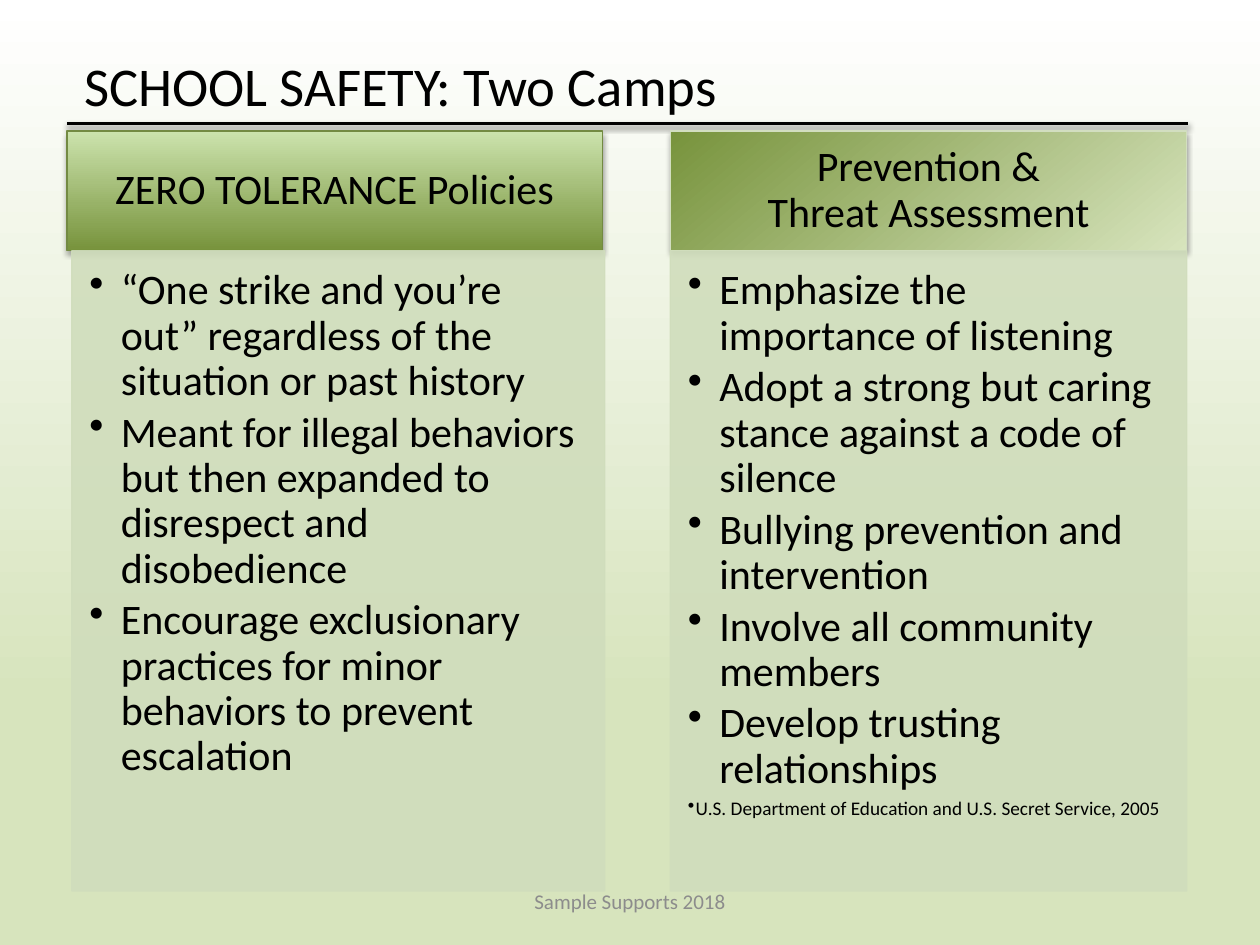
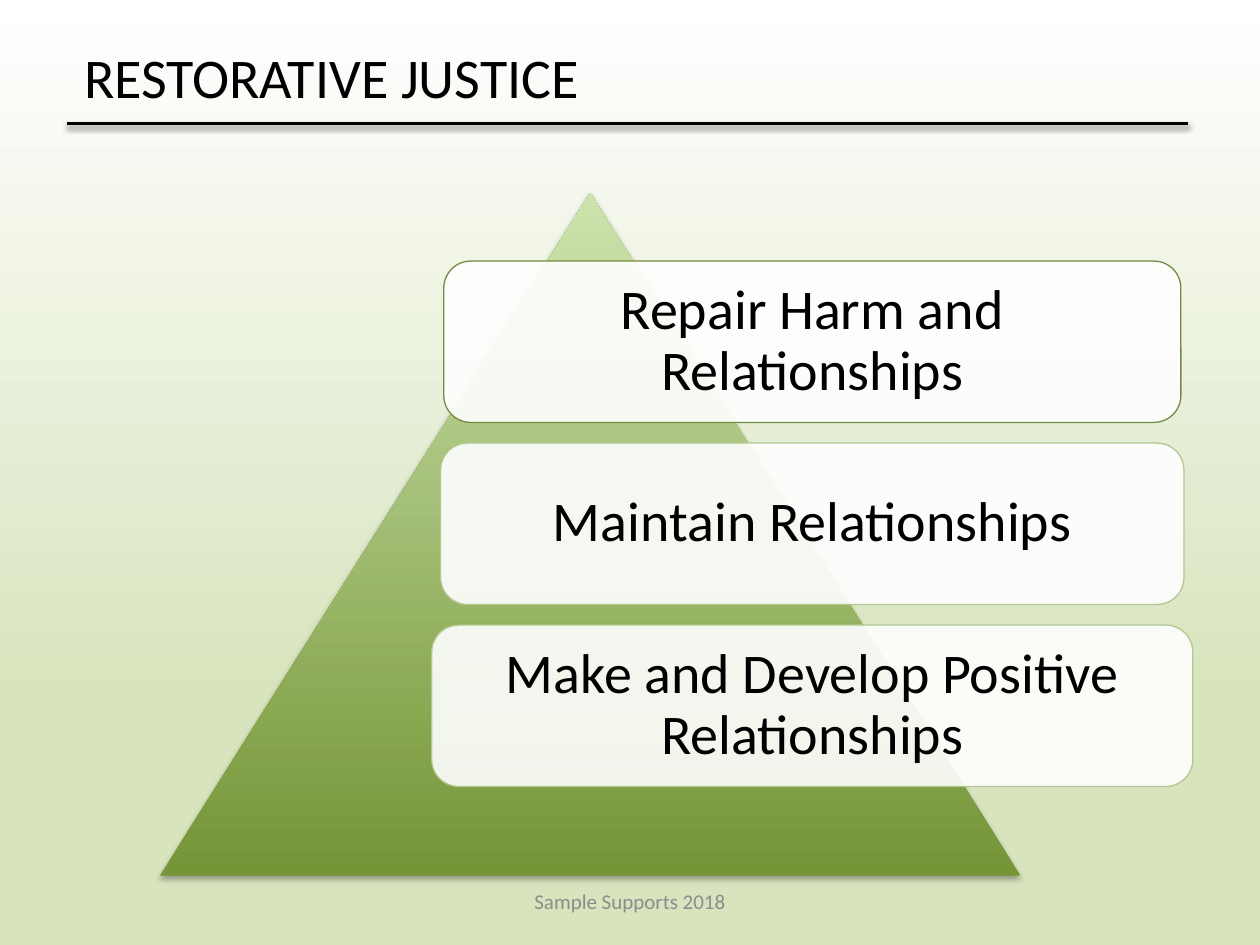
from dataclasses import dataclass

from lxml.etree import SubElement
from pptx import Presentation
from pptx.dml.color import RGBColor
from pptx.enum.shapes import MSO_CONNECTOR, MSO_SHAPE
from pptx.enum.text import MSO_ANCHOR, PP_ALIGN
from pptx.oxml.ns import qn
from pptx.util import Pt


@dataclass(frozen=True)
class Theme:
    font: str = "Calibri"
    black: str = "000000"
    white: str = "FFFFFF"
    footer_gray: str = "8C8C8C"
    pale_green: str = "D7E4BD"
    olive: str = "77933C"
    deep_olive: str = "769537"
    light_green: str = "CCE3AD"
    panel_green: str = "D0DDBC"
    dark_outline: str = "738A42"
    soft_outline: str = "B3C791"
    header_outline: str = "D2DEC0"
    box_size: float = 32
    body_size: float = 24
    footer_size: float = 12
    source_size: float = 11


theme = Theme()


def style(shape, fill=None, line=None, width=0.75, alpha=None, shadow=None):
    """Fill is a colour or (start, end, clockwise angle); shadow is (opacity %, distance)."""
    properties = shape._element.spPr
    if isinstance(fill, tuple):
        *colors, angle = fill
        shape.fill.gradient()
        shape.fill.gradient_angle = 360 - angle
        for stop, color in zip(shape.fill.gradient_stops, colors):
            stop.color.rgb = RGBColor.from_string(color)
    elif fill:
        shape.fill.solid()
        shape.fill.fore_color.rgb = RGBColor.from_string(fill)
    if line:
        shape.line.color.rgb = RGBColor.from_string(line)
        shape.line.width = Pt(width)
    else:
        shape.line.fill.background()
    if alpha:
        for color in properties.iter(qn("a:srgbClr")):
            if color.get("val") == fill:
                SubElement(color, qn("a:alpha"), val=str(alpha * 1000))
    effects = SubElement(properties, qn("a:effectLst"))
    if shadow:
        opacity, distance = shadow
        outer = SubElement(effects, qn("a:outerShdw"), blurRad=str(Pt(3.1)),
                           dist=str(Pt(distance)), dir="5400000", rotWithShape="0")
        color = SubElement(outer, qn("a:srgbClr"), val=theme.black)
        SubElement(color, qn("a:alpha"), val=str(opacity * 1000))


def write_text(shape, lines, size, color=theme.black, align=PP_ALIGN.CENTER,
               anchor=MSO_ANCHOR.MIDDLE, insets=(7.2, 3.6, 7.2, 3.6), spacing=0.9, after=0):
    """Write one paragraph per line; insets run left, top, right, bottom."""
    frame = shape.text_frame
    frame.word_wrap = True
    frame.vertical_anchor = anchor
    frame.margin_left, frame.margin_top, frame.margin_right, frame.margin_bottom = map(Pt, insets)
    for index, line in enumerate(lines):
        paragraph = frame.add_paragraph() if index else frame.paragraphs[0]
        paragraph.alignment = align
        paragraph.line_spacing = spacing
        paragraph.space_after = Pt(after)
        run = paragraph.add_run()
        run.text = line
        run.font.name = theme.font
        run.font.size = Pt(size)
        run.font.color.rgb = RGBColor.from_string(color)


presentation = Presentation()
presentation.slide_width, presentation.slide_height = Pt(720), Pt(540)
soft_shadow = (35, 1.8)

# Shared background, title, rule and footer
slides = []
for title, title_top, title_size in [("SCHOOL SAFETY: Two Camps", 26, 31.2),
                                     ("RESTORATIVE JUSTICE", 21, 32)]:
    slide = presentation.slides.add_slide(presentation.slide_layouts[6])
    slides.append(slide)
    background = slide.background.fill
    background.gradient()
    background.gradient_angle = 270
    for stop, color, position in zip(background.gradient_stops,
                                     (theme.white, theme.pale_green), (0, 0.74)):
        stop.color.rgb = RGBColor.from_string(color)
        stop.position = position

    footer = slide.shapes.add_textbox(Pt(246), Pt(500.5), Pt(228), Pt(28.8))
    write_text(footer, ["Sample Supports 2018"], theme.footer_size, theme.footer_gray, spacing=1)
    rule = slide.shapes.add_connector(MSO_CONNECTOR.STRAIGHT, Pt(38.2), Pt(70.6), Pt(679), Pt(70.6))
    style(rule, line=theme.black, width=2, shadow=(38, 1.6))
    title_box = slide.shapes.add_textbox(Pt(41), Pt(title_top), Pt(500), Pt(46))
    write_text(title_box, [title], title_size, align=PP_ALIGN.LEFT,
               anchor=MSO_ANCHOR.TOP, spacing=1)

camps_slide, justice_slide = slides

# Two camps: a header above a bulleted panel
source = "U.S. Department of Education and U.S. Secret Service, 2005"
camps = [
    (["ZERO TOLERANCE Policies"], (38.2, 306), (41, 304.6),
     (theme.olive, theme.light_green, 270), theme.dark_outline,
     ["“One strike and you’re out” regardless of the situation or past history",
      "Meant for illegal behaviors but then expanded to disrespect and disobedience",
      "Encourage exclusionary practices for minor behaviors to prevent escalation"]),
    (["Prevention &", "Threat Assessment"], (383, 295.2), (383, 295.2),
     (theme.olive, theme.pale_green, 50), theme.header_outline,
     ["Emphasize the importance of listening",
      "Adopt a strong but caring stance against a code of silence",
      "Bullying prevention and intervention",
      "Involve all community members",
      "Develop trusting relationships",
      source]),
]
for heading, (header_left, header_width), (panel_left, panel_width), fill, outline, points in camps:
    header = camps_slide.shapes.add_shape(
        MSO_SHAPE.RECTANGLE, Pt(header_left), Pt(74.9), Pt(header_width), Pt(68.4))
    style(header, fill, outline, shadow=soft_shadow)
    write_text(header, heading, theme.body_size, insets=(13.7, 7.9, 13.7, 7.9))

    panel = camps_slide.shapes.add_shape(
        MSO_SHAPE.RECTANGLE, Pt(panel_left), Pt(143.3), Pt(panel_width), Pt(365.8))
    style(panel, theme.panel_green, theme.panel_green, alpha=90)
    write_text(panel, points, theme.body_size, align=PP_ALIGN.LEFT, anchor=MSO_ANCHOR.TOP,
               insets=(10.1, 10.1, 13.7, 15.1), after=3.6)
    for paragraph in panel.text_frame.paragraphs:
        indent = 18
        if paragraph.text == source:
            indent = 4.5
            paragraph.runs[0].font.size = Pt(theme.source_size)
        paragraph.level = 1
        paragraph_properties = paragraph._p.get_or_add_pPr()
        paragraph_properties.set("marL", str(Pt(indent)))
        paragraph_properties.set("indent", str(-Pt(indent)))
        SubElement(paragraph_properties, qn("a:buChar"), char="•")

# Restorative justice: three boxes over a pyramid
pyramid = justice_slide.shapes.add_shape(
    MSO_SHAPE.ISOSCELES_TRIANGLE, Pt(91.4), Pt(110.2), Pt(491.8), Pt(390.2))
style(pyramid, (theme.deep_olive, theme.light_green, 270), shadow=soft_shadow)

box_center, box_top, box_height, box_pitch = 464.2, 149.2, 92.2, 104
levels = [
    ("Repair Harm and Relationships", 421.2, theme.dark_outline),
    ("Maintain Relationships", 424.8, theme.soft_outline),
    ("Make and Develop Positive Relationships", 434.9, theme.soft_outline),
]
for index, (label, width, outline) in enumerate(levels):
    box = justice_slide.shapes.add_shape(
        MSO_SHAPE.ROUNDED_RECTANGLE, Pt(box_center - width / 2),
        Pt(box_top + index * box_pitch), Pt(width), Pt(box_height))
    style(box, theme.white, outline, alpha=90)
    write_text(box, [label], theme.box_size, insets=(9.6, 9.6, 9.6, 9.6))

presentation.save("out.pptx")
